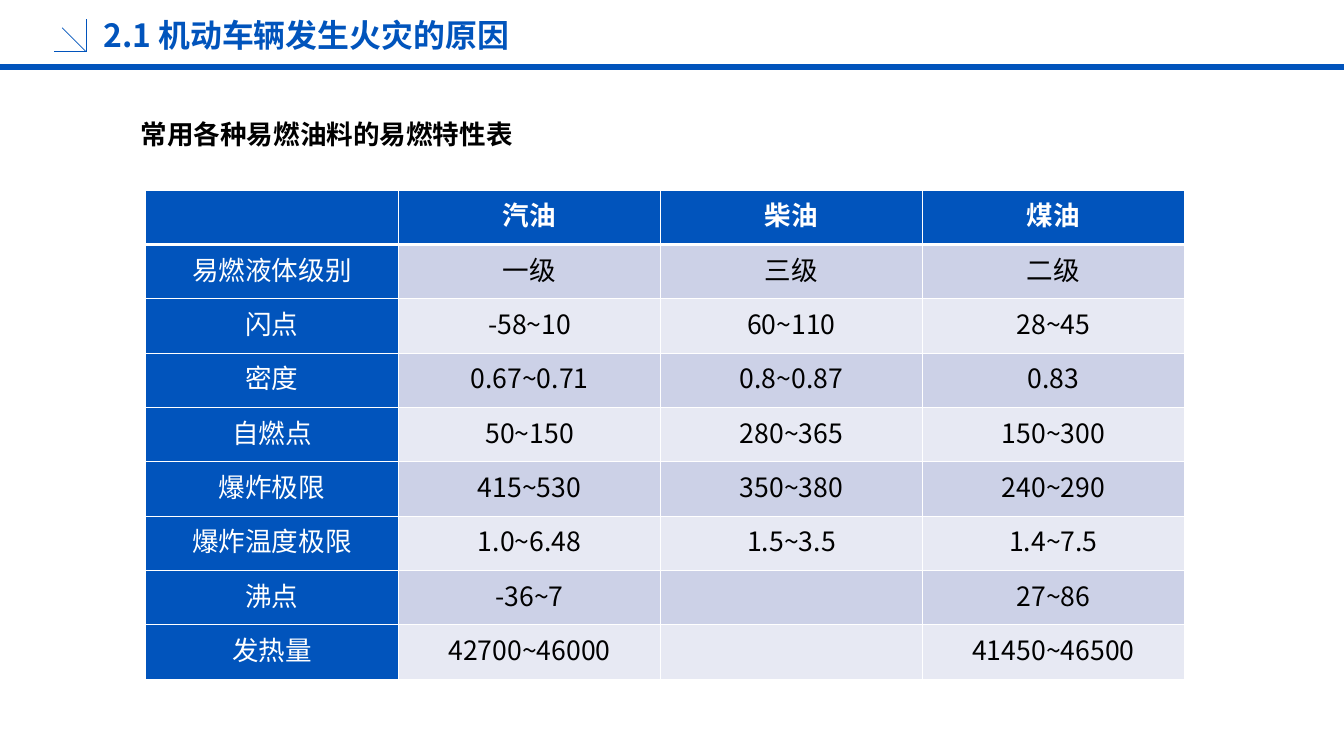
import pptx
import pptx.dml.color
import pptx.enum.shapes
import pptx.enum.text
import pptx.oxml
import pptx.oxml.ns
import pptx.util

RGB = pptx.dml.color.RGBColor
BLUE = RGB(0x01, 0x54, 0xBC)
WHITE = RGB(0xFF, 0xFF, 0xFF)
BLACK = RGB(0x00, 0x00, 0x00)
BANDS = [RGB(0xCC, 0xD1, 0xE7), RGB(0xE7, 0xE9, 0xF3)]
FACE = "Noto Sans CJK SC"

WIDE, HIGH = pptx.util.Inches(14.06), pptx.util.Inches(7.91)
ALIGN = pptx.enum.text.PP_ALIGN
SPACE = pptx.oxml.ns.nsdecls("a")

FUELS = [
    ["", "汽油", "柴油", "煤油"],
    ["易燃液体级别", "一级", "三级", "二级"],
    ["闪点", "-58~10", "60~110", "28~45"],
    ["密度", "0.67~0.71", "0.8~0.87", "0.83"],
    ["自燃点", "50~150", "280~365", "150~300"],
    ["爆炸极限", "415~530", "350~380", "240~290"],
    ["爆炸温度极限", "1.0~6.48", "1.5~3.5", "1.4~7.5"],
    ["沸点", "-36~7", "", "27~86"],
    ["发热量", "42700~46000", "", "41450~46500"],
]


# Lengths in percent of the slide's width and height
def across(share):
    return round(WIDE * share / 100)


def down(share):
    return round(HIGH * share / 100)


def apply(item, form):
    for name, value in form.items():
        setattr(item, name, value)


def write(para, text, size, color, bold, align):
    para.alignment = align
    run = para.add_run()
    run.text = text
    apply(run.font, {"name": FACE, "size": pptx.util.Pt(size), "bold": bold})
    run.font.color.rgb = color
    east = pptx.oxml.parse_xml(f'<a:ea {SPACE} typeface="{FACE}"/>')
    run.font._element.find(pptx.oxml.ns.qn("a:latin")).addnext(east)


def add_line(slide, start, end, weight):
    line = slide.shapes.add_connector(
        pptx.enum.shapes.MSO_CONNECTOR.STRAIGHT,
        across(start[0]), down(start[1]), across(end[0]), down(end[1]))
    line.line.color.rgb = BLUE
    line.line.width = pptx.util.Pt(weight)
    line._element.spPr.append(
        pptx.oxml.parse_xml(f"<a:effectLst {SPACE}/>"))


def set_head(shape, left, top, text, size, color):
    apply(shape, {"left": across(left), "top": down(top),
                  "width": across(39.76), "height": down(4.3)})
    frame = shape.text_frame
    apply(frame, {
        "word_wrap": True,
        "auto_size": pptx.enum.text.MSO_AUTO_SIZE.NONE,
        "vertical_anchor": pptx.enum.text.MSO_ANCHOR.MIDDLE,
        "margin_left": pptx.util.Inches(0.11),
        "margin_right": pptx.util.Inches(0.11),
    })
    para = frame.paragraphs[0]
    para.line_spacing = 1.2
    write(para, text, size, color, True, ALIGN.LEFT)


def set_edges(cell, row):
    thick = {"T": row == 1, "B": row == 0}
    for side in "LRTB":
        width = pptx.util.Pt(3 if thick.get(side) else 1)
        cell._tc.get_or_add_tcPr().append(pptx.oxml.parse_xml(
            f'<a:ln{side} {SPACE} w="{width}">'
            f'<a:solidFill><a:srgbClr val="{WHITE}"/></a:solidFill>'
            f'</a:ln{side}>'))


def add_grid(slide, data):
    cols = [18.85] + [19.49] * 3
    tall = 7.19
    grid = slide.shapes.add_table(
        len(data), len(cols), across(10.81), down(25.16),
        across(sum(cols)), down(tall * len(data))).table
    for col, share in zip(grid.columns, cols):
        col.width = across(share)
    for r, words in enumerate(data):
        grid.rows[r].height = down(tall)
        for c, text in enumerate(words):
            cell = grid.cell(r, c)
            label = r == 0 or c == 0
            set_edges(cell, r)
            cell.fill.solid()
            cell.fill.fore_color.rgb = BLUE if label else BANDS[(r - 1) % 2]
            if text:
                write(cell.text_frame.paragraphs[0], text, 20,
                      WHITE if label else BLACK, r == 0, ALIGN.CENTER)


def main():
    deck = pptx.Presentation()
    apply(deck, {"slide_width": WIDE, "slide_height": HIGH})
    slide = deck.slides.add_slide(deck.slide_layouts.get_by_name("Title Only"))

    # Header rule and corner arrow
    add_line(slide, (0, 8.85), (100, 8.85), 4.5)
    corner = (6.4, 6.83)
    for tip in [(4.05, 6.83), (6.4, 2.53), (4.62, 3.67)]:
        add_line(slide, corner, tip, 0.5)

    # Title and table heading
    set_head(slide.shapes.title, 6.9, 1.9, "2.1 机动车辆发生火灾的原因", 24, BLUE)
    set_head(slide.shapes.add_textbox(0, 0, 0, 0), 9.67, 15.17,
             "常用各种易燃油料的易燃特性表", 20, BLACK)

    # Fuel properties
    add_grid(slide, FUELS)
    deck.save("out.pptx")


if __name__ == "__main__":
    main()
